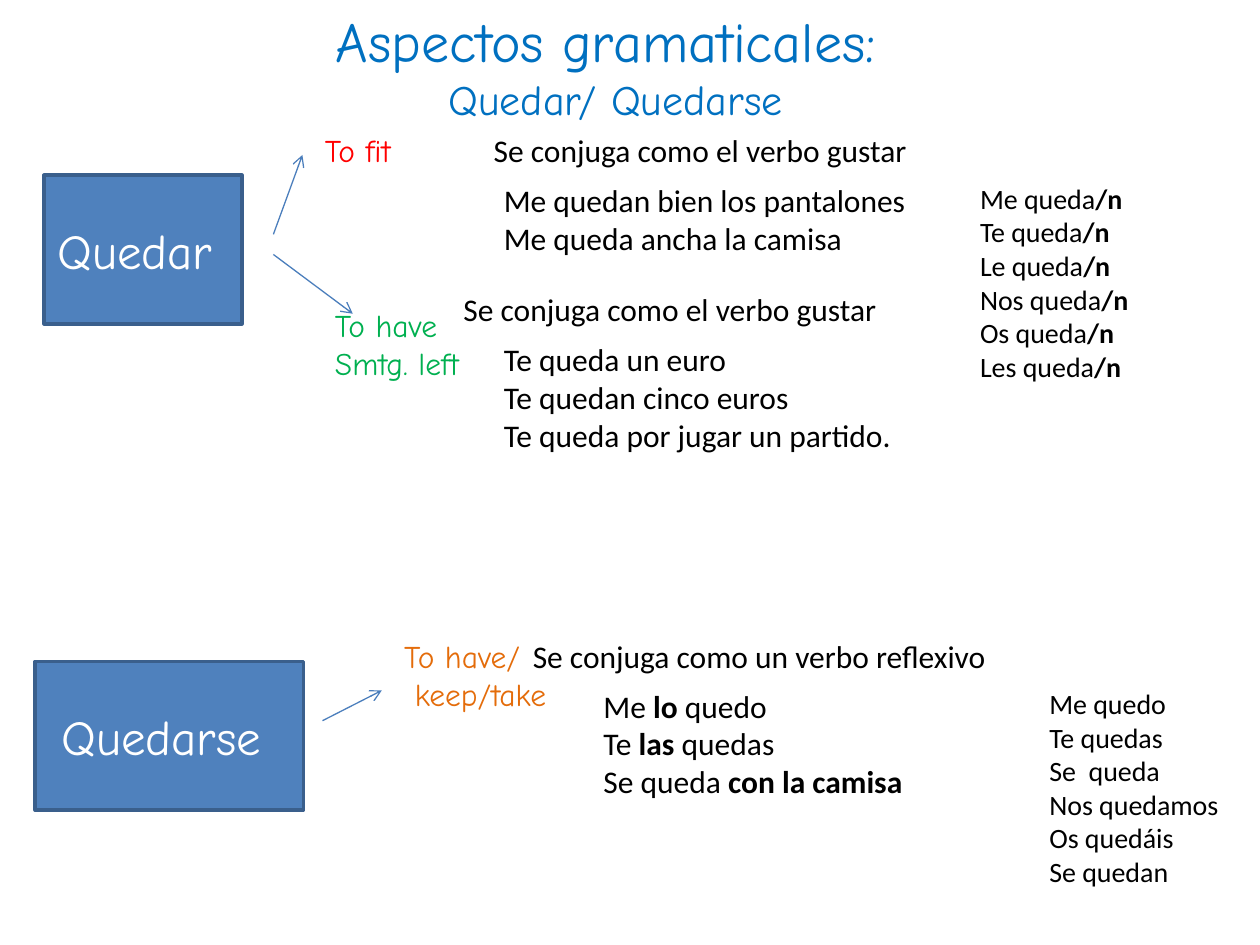
from lxml.etree import SubElement
from pptx import Presentation
from pptx.dml.color import RGBColor
from pptx.enum.shapes import MSO_CONNECTOR, MSO_SHAPE
from pptx.enum.text import MSO_ANCHOR, MSO_AUTO_SIZE, PP_ALIGN
from pptx.oxml.ns import qn
from pptx.util import Inches, Pt

BODY, HAND = "Calibri", "Comic Neue"
BLACK, WHITE, BLUE = "000000", "FFFFFF", "0070C0"
RULE_GUSTAR = "Se conjuga como el verbo gustar"

# Content: a line is a list of (text, bold) runs or a plain string
TITLE_BOX = (0.2, 0, 9.37, 1.04)
TITLE_LINES = [("Aspectos gramaticales: ", 32), ("Quedar/ Quedarse", 24)]

VERBS = [
    ("Quedar ", (0.35, 1.39, 1.57, 1.18)),
    ("Quedarse ", (0.28, 5.25, 2.13, 1.18)),
]

ARROWS = [
    ((2.17, 1.86), (2.4, 1.23)),
    ((2.17, 2.02), (2.8, 2.49)),
    ((2.56, 5.72), (3.03, 5.48)),
]

MEANINGS = [
    ((2.48, 0.99, 0.98, 0.4), "FF0000", ["To fit"]),
    ((2.56, 2.38, 1.49, 0.71), "00B050", ["To have", "Smtg. left"]),
    ((3.11, 5.01, 1.48, 0.71), "E46C0A", ["To have/", " keep/take"]),
]

EXPLANATIONS = [
    ((3.82, 0.99, 3.52, 0.4), [RULE_GUSTAR]),
    ((3.9, 1.39, 3.43, 0.71),
     ["Me quedan bien los pantalones", "Me queda ancha la camisa"]),
    ((3.58, 2.25, 3.52, 0.4), [RULE_GUSTAR]),
    ((3.9, 2.65, 3.31, 1.01),
     ["Te queda un euro", "Te quedan cinco euros", "Te queda por jugar un partido."]),
    ((4.13, 5.01, 4.01, 0.4), ["Se conjuga como un verbo reflexivo"]),
    ((4.69, 5.4, 2.58, 1.01), [
        [("Me ", False), ("lo", True), (" quedo", False)],
        [("Te ", False), ("las", True), (" quedas", False)],
        [("Se queda", False), (" con la camisa", True)],
    ]),
]

PRONOUNS = ["Me", "Te", "Le", "Nos", "Os", "Les"]
CONJUGATIONS = [
    ((7.68, 1.39, 1.44, 1.72),
     [[(f"{pronoun} queda", False), ("/n", True)] for pronoun in PRONOUNS]),
    ((8.23, 5.4, 1.56, 1.78),
     ["Me quedo", "Te quedas", "Se  queda", "Nos quedamos", "Os quedáis", "Se quedan"]),
]


def color(value):
    return RGBColor.from_string(value)


def add_run(paragraph, text, size, font_name, font_color, bold=False):
    run = paragraph.add_run()
    run.text = text
    run.font.size = Pt(size)
    run.font.name = font_name
    run.font.color.rgb = color(font_color)
    run.font.bold = bold


def next_paragraph(frame, index):
    return frame.add_paragraph() if index else frame.paragraphs[0]


def add_text_box(slide, box, wrap):
    frame = slide.shapes.add_textbox(*map(Inches, box)).text_frame
    frame.word_wrap = wrap
    frame.auto_size = MSO_AUTO_SIZE.SHAPE_TO_FIT_TEXT
    return frame


def add_lines(slide, box, lines, size, font_name=BODY, font_color=BLACK):
    frame = add_text_box(slide, box, wrap=False)
    for index, line in enumerate(lines):
        paragraph = next_paragraph(frame, index)
        runs = [(line, False)] if isinstance(line, str) else line
        for text, bold in runs:
            add_run(paragraph, text, size, font_name, font_color, bold)


def add_title(slide):
    frame = add_text_box(slide, TITLE_BOX, wrap=True)
    for index, (text, size) in enumerate(TITLE_LINES):
        paragraph = next_paragraph(frame, index)
        paragraph.alignment = PP_ALIGN.CENTER
        add_run(paragraph, text, size, HAND, BLUE)


def add_verb(slide, text, box):
    shape = slide.shapes.add_shape(MSO_SHAPE.RECTANGLE, *map(Inches, box))
    shape.shadow.inherit = False
    shape.fill.solid()
    shape.fill.fore_color.rgb = color("4F81BD")
    shape.line.color.rgb = color("3A5F8C")
    shape.line.width = Pt(2)
    frame = shape.text_frame
    frame.vertical_anchor = MSO_ANCHOR.MIDDLE
    frame.paragraphs[0].alignment = PP_ALIGN.CENTER
    add_run(frame.paragraphs[0], text, 28, HAND, WHITE)


def add_arrow(slide, start, end):
    arrow = slide.shapes.add_connector(
        MSO_CONNECTOR.STRAIGHT, *map(Inches, start + end))
    arrow.line.color.rgb = color("4B7EBC")
    arrow.line.width = Pt(0.75)
    SubElement(arrow.line._get_or_add_ln(), qn("a:tailEnd"), type="arrow")
    SubElement(arrow._element.spPr, qn("a:effectLst"))


def main():
    presentation = Presentation()
    presentation.slide_width = Inches(10)
    presentation.slide_height = Inches(7.5)
    slide = presentation.slides.add_slide(presentation.slide_layouts[6])

    # Title, verbs and arrows
    add_title(slide)
    for text, box in VERBS:
        add_verb(slide, text, box)
    for start, end in ARROWS:
        add_arrow(slide, start, end)

    # Meanings, explanations and conjugations
    for box, font_color, lines in MEANINGS:
        add_lines(slide, box, lines, 18, HAND, font_color)
    for box, lines in EXPLANATIONS:
        add_lines(slide, box, lines, 18)
    for box, lines in CONJUGATIONS:
        add_lines(slide, box, lines, 16)

    presentation.save("out.pptx")


if __name__ == "__main__":
    main()
